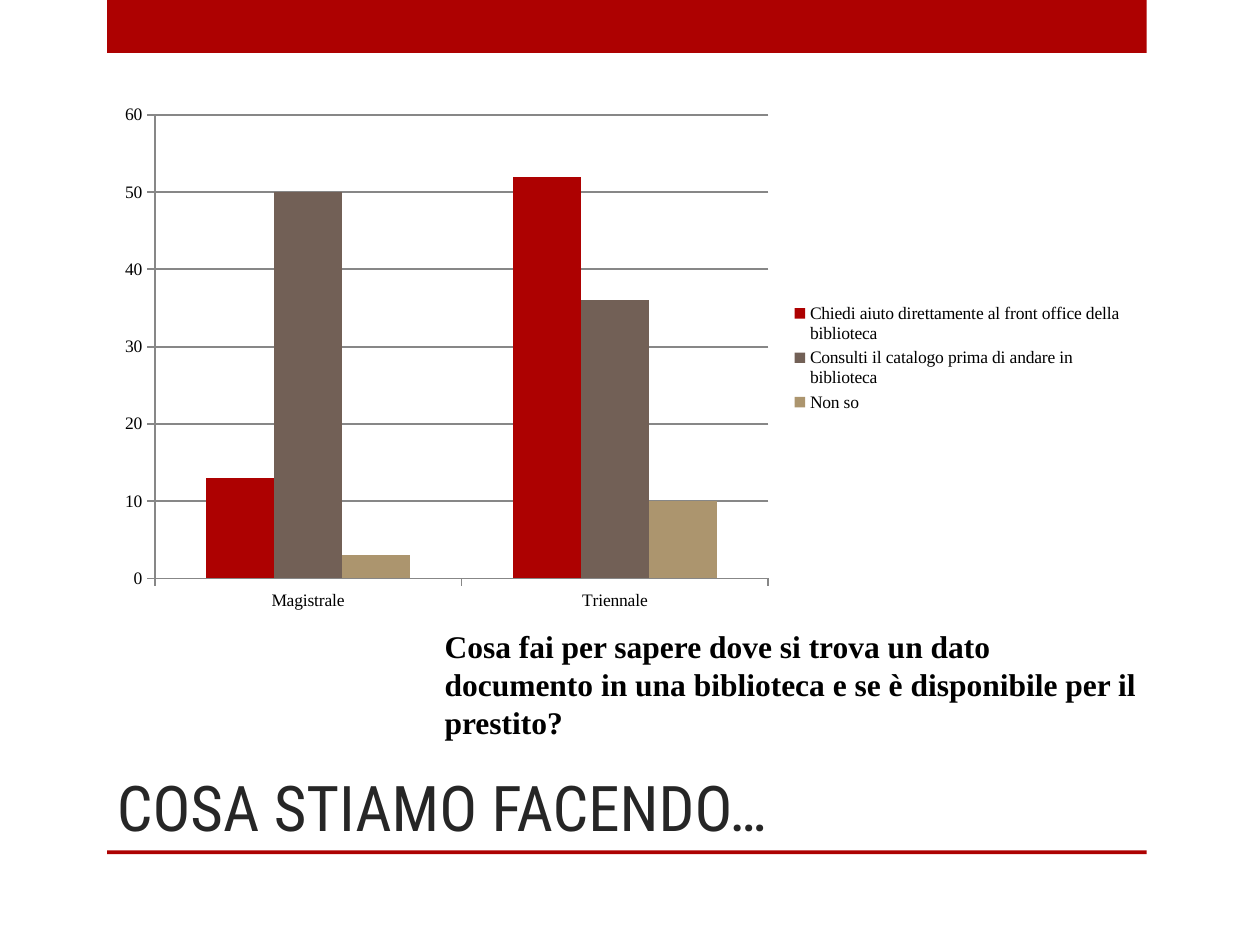
"""Build the library survey slide with its clustered column chart."""
from dataclasses import dataclass

import pptx
import pptx.chart.data
import pptx.dml.color
import pptx.enum.chart
import pptx.enum.shapes
import pptx.enum.text
import pptx.util


@dataclass(frozen=True)
class Theme:
    red: str = "AD0101"
    brown: str = "726056"
    sand: str = "AC956E"
    grey: str = "878787"
    ink: str = "000000"
    title_ink: str = "262626"
    title_font: str = "Roboto Condensed"
    body_font: str = "Times New Roman"
    title_size: int = 36
    question_size: int = 18
    chart_size: int = 10
    line_width: int = 1


class SlideBuilder:
    CELL = 0.25

    def __init__(self, slide, theme):
        self.slide = slide
        self.theme = theme

    def place(self, *cells):
        return [pptx.util.Inches(cell * self.CELL) for cell in cells]

    def color(self, value):
        return pptx.dml.color.RGBColor.from_string(value)

    def style_font(self, font, name, size, color, bold=False):
        font.name = name
        font.size = pptx.util.Pt(size)
        font.color.rgb = self.color(color)
        font.bold = bold

    def bar(self, *cells):
        shape = self.slide.shapes.add_shape(
            pptx.enum.shapes.MSO_SHAPE.RECTANGLE, *self.place(*cells))
        shape.shadow.inherit = False
        shape.fill.solid()
        shape.fill.fore_color.rgb = self.color(self.theme.red)
        shape.line.fill.background()

    def text(self, cells, words, anchor, auto_size, **style):
        frame = self.slide.shapes.add_textbox(*self.place(*cells)).text_frame
        frame.word_wrap = True
        frame.vertical_anchor = anchor
        frame.auto_size = auto_size
        run = frame.paragraphs[0].add_run()
        run.text = words
        self.style_font(run.font, **style)

    def style_line(self, line):
        line.color.rgb = self.color(self.theme.grey)
        line.width = pptx.util.Pt(self.theme.line_width)

    def column_chart(self, cells, categories, series):
        data = pptx.chart.data.CategoryChartData()
        data.categories = categories
        for name, values, _ in series:
            data.add_series(name, values)
        chart = self.slide.shapes.add_chart(
            pptx.enum.chart.XL_CHART_TYPE.COLUMN_CLUSTERED,
            *self.place(*cells), data).chart
        self.style_font(chart.font, self.theme.body_font,
                        self.theme.chart_size, self.theme.ink)
        chart.has_title = False
        chart.has_legend = True
        chart.legend.position = pptx.enum.chart.XL_LEGEND_POSITION.RIGHT
        chart.legend.include_in_layout = False

        plot = chart.plots[0]
        plot.vary_by_categories = False
        plot.gap_width = 150
        for column, (_, _, color) in zip(plot.series, series):
            column.format.fill.solid()
            column.format.fill.fore_color.rgb = self.color(color)

        for axis in (chart.category_axis, chart.value_axis):
            axis.major_tick_mark = pptx.enum.chart.XL_TICK_MARK.OUTSIDE
            axis.minor_tick_mark = pptx.enum.chart.XL_TICK_MARK.NONE
            self.style_line(axis.format.line)
        value_axis = chart.value_axis
        value_axis.minimum_scale = 0
        value_axis.maximum_scale = 60
        value_axis.major_unit = 10
        value_axis.has_major_gridlines = True
        self.style_line(value_axis.major_gridlines.format.line)


def main():
    presentation = pptx.Presentation()
    presentation.slide_width = pptx.util.Inches(10)
    presentation.slide_height = pptx.util.Inches(7.5)
    theme = Theme()
    builder = SlideBuilder(
        presentation.slides.add_slide(presentation.slide_layouts[6]), theme)

    builder.bar(3.4, 0, 33, 1.68)
    builder.bar(3.4, 27, 33, 0.12)
    builder.text(
        (3.32, 20, 29.68, 7), "COSA STIAMO FACENDO…",
        pptx.enum.text.MSO_ANCHOR.BOTTOM, pptx.enum.text.MSO_AUTO_SIZE.NONE,
        name=theme.title_font, size=theme.title_size, color=theme.title_ink)
    builder.text(
        (13.72, 19.72, 23, 2.84),
        "Cosa fai per sapere dove si trova un dato documento in una "
        "biblioteca e se è disponibile per il prestito?",
        pptx.enum.text.MSO_ANCHOR.TOP,
        pptx.enum.text.MSO_AUTO_SIZE.SHAPE_TO_FIT_TEXT,
        name=theme.body_font, size=theme.question_size, color=theme.ink,
        bold=True)
    builder.column_chart(
        (3.32, 3, 32.72, 16.72), ("Magistrale", "Triennale"),
        (
            ("Chiedi aiuto direttamente al front office della biblioteca",
             (13, 52), theme.red),
            ("Consulti il catalogo prima di andare in biblioteca",
             (50, 36), theme.brown),
            ("Non so", (3, 10), theme.sand),
        ))
    presentation.save("out.pptx")


if __name__ == "__main__":
    main()
